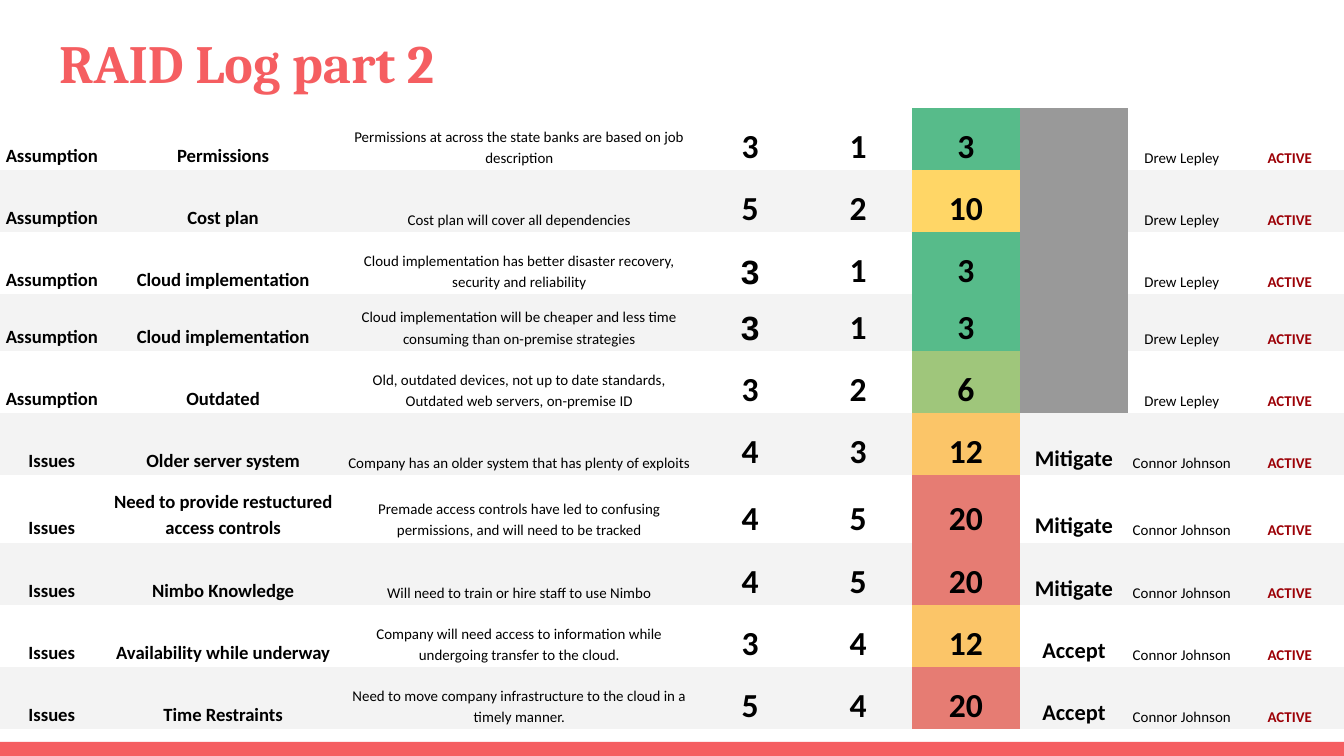
from pptx import Presentation
from pptx.dml.color import RGBColor
from pptx.enum.shapes import MSO_SHAPE
from pptx.enum.text import MSO_ANCHOR, PP_ALIGN
from pptx.oxml.ns import qn
from pptx.util import Inches, Pt

RECTANGLE = MSO_SHAPE.RECTANGLE
BOTTOM, MIDDLE = MSO_ANCHOR.BOTTOM, MSO_ANCHOR.MIDDLE
LEFT, CENTER = PP_ALIGN.LEFT, PP_ALIGN.CENTER

CORAL = RGBColor(0xF5, 0x5E, 0x61)
BLACK = RGBColor(0x00, 0x00, 0x00)
WHITE = RGBColor(0xFF, 0xFF, 0xFF)
LIGHT_GRAY = RGBColor(0xF3, 0xF3, 0xF3)
GRAY = RGBColor(0x99, 0x99, 0x99)
DARK_RED = RGBColor(0x9C, 0x00, 0x06)
SCORE_COLORS = {
    3: RGBColor(0x57, 0xBB, 0x8A),
    6: RGBColor(0x9F, 0xC6, 0x7B),
    10: RGBColor(0xFF, 0xD6, 0x66),
    12: RGBColor(0xFB, 0xC5, 0x68),
    20: RGBColor(0xE6, 0x7C, 0x73),
}
NO_STYLE_NO_GRID = "{2D5ABB26-0587-4C30-8999-92F81FD0307C}"

OWNERS = {"Assumption": "Drew Lepley", "Issues": "Connor Johnson"}
# type, topic, description, impact, likelihood, response
ENTRIES = [
    ("Assumption", "Permissions",
     "Permissions at across the state banks are based on job description", 3, 1, ""),
    ("Assumption", "Cost plan", "Cost plan will cover all dependencies", 5, 2, ""),
    ("Assumption", "Cloud implementation",
     "Cloud implementation has better disaster recovery, security and reliability", 3, 1, ""),
    ("Assumption", "Cloud implementation",
     "Cloud implementation will be cheaper and less time consuming than on-premise strategies",
     3, 1, ""),
    ("Assumption", "Outdated",
     "Old, outdated devices, not up to date standards, Outdated web servers, on-premise ID",
     3, 2, ""),
    ("Issues", "Older server system",
     "Company has an older system that has plenty of exploits", 4, 3, "Mitigate"),
    ("Issues", "Need to provide restuctured access controls",
     "Premade access controls have led to confusing permissions, and will need to be tracked",
     4, 5, "Mitigate"),
    ("Issues", "Nimbo Knowledge",
     "Will need to train or hire staff to use Nimbo", 4, 5, "Mitigate"),
    ("Issues", "Availability while underway",
     "Company will need access to information while undergoing transfer to the cloud.",
     3, 4, "Accept"),
    ("Issues", "Time Restraints",
     "Need to move company infrastructure to the cloud in a timely manner.", 5, 4, "Accept"),
]
TABLE_WIDTH, TABLE_HEIGHT = 10, 4.63
TEXT_COLUMN_WIDTHS = [0.77, 1.78, 2.63]
NARROW_COLUMN_COUNT = 6
COLUMN_SIZES = [10, 10, 8, 18, 18, 18, 12, 8, 8]
PLAIN_COLUMNS = (2, 7)
IMPACT, SCORE, RESPONSE, STATUS = 3, 5, 6, 8
SPECIAL_ROW_HEIGHTS = {3: 0.42, 6: 0.5}
ARIAL_IMPACT_ROWS = (2, 3)


def write_text(text_frame, text, size, font="Calibri", color=BLACK, bold=True,
               align=CENTER, line_spacing=1.15):
    paragraph = text_frame.paragraphs[0]
    paragraph.alignment = align
    paragraph.line_spacing = line_spacing
    run = paragraph.add_run()
    run.text = text
    run.font.size = Pt(size)
    run.font.name = font
    run.font.bold = bold
    run.font.color.rgb = color


presentation = Presentation()
presentation.slide_width = Inches(10)
presentation.slide_height = Inches(10 * 9 / 16)
slide = presentation.slides.add_slide(presentation.slide_layouts[5])

# Title and footer bar
title = slide.shapes.title
title.left, title.top = Inches(0.34), Inches(0.12)
title.width, title.height = Inches(9.32), Inches(0.68)
title_frame = title.text_frame
title_frame.margin_left = title_frame.margin_right = Inches(0.1)
title_frame.margin_top = title_frame.margin_bottom = Inches(0.1)
title_frame.vertical_anchor = MIDDLE
write_text(title_frame, "RAID Log part 2", 28.8, font="Cambria", color=CORAL,
           align=LEFT, line_spacing=1.0)

footer_bar = slide.shapes.add_shape(RECTANGLE, 0, Inches(5.52), Inches(10), Inches(0.11))
footer_bar.shadow.inherit = False
footer_bar.fill.solid()
footer_bar.fill.fore_color.rgb = CORAL
footer_bar.line.fill.background()

# RAID log table: narrow columns and regular rows share the remaining space
narrow_width = (TABLE_WIDTH - sum(TEXT_COLUMN_WIDTHS)) / NARROW_COLUMN_COUNT
column_widths = TEXT_COLUMN_WIDTHS + [narrow_width] * NARROW_COLUMN_COUNT
regular_height = ((TABLE_HEIGHT - sum(SPECIAL_ROW_HEIGHTS.values()))
                  / (len(ENTRIES) - len(SPECIAL_ROW_HEIGHTS)))

table = slide.shapes.add_table(
    len(ENTRIES), len(column_widths), 0, Inches(0.8),
    Inches(TABLE_WIDTH), Inches(TABLE_HEIGHT)).table
table.first_row = False
table.horz_banding = False
table._tbl.tblPr.find(qn("a:tableStyleId")).text = NO_STYLE_NO_GRID
for column, width in zip(table.columns, column_widths):
    column.width = Inches(width)

for row, (kind, topic, description, impact, likelihood, response) in enumerate(ENTRIES):
    table.rows[row].height = Inches(SPECIAL_ROW_HEIGHTS.get(row, regular_height))
    score = impact * likelihood
    values = (kind, topic, description, impact, likelihood, score, response,
              OWNERS[kind], "ACTIVE")
    for column, value in enumerate(values):
        cell = table.cell(row, column)
        cell.vertical_anchor = BOTTOM
        cell.margin_left = cell.margin_right = Inches(0.03)
        cell.margin_top = cell.margin_bottom = Inches(0.02)

        fill_color = LIGHT_GRAY if row % 2 else WHITE
        if column == SCORE:
            fill_color = SCORE_COLORS[score]
        elif column == RESPONSE and not response:
            fill_color = GRAY
        cell.fill.solid()
        cell.fill.fore_color.rgb = fill_color

        if value:
            arial = column == IMPACT and row in ARIAL_IMPACT_ROWS
            write_text(cell.text_frame, str(value), COLUMN_SIZES[column],
                       font="Arial" if arial else "Calibri",
                       color=DARK_RED if column == STATUS else BLACK,
                       bold=column not in PLAIN_COLUMNS)

presentation.save("out.pptx")
